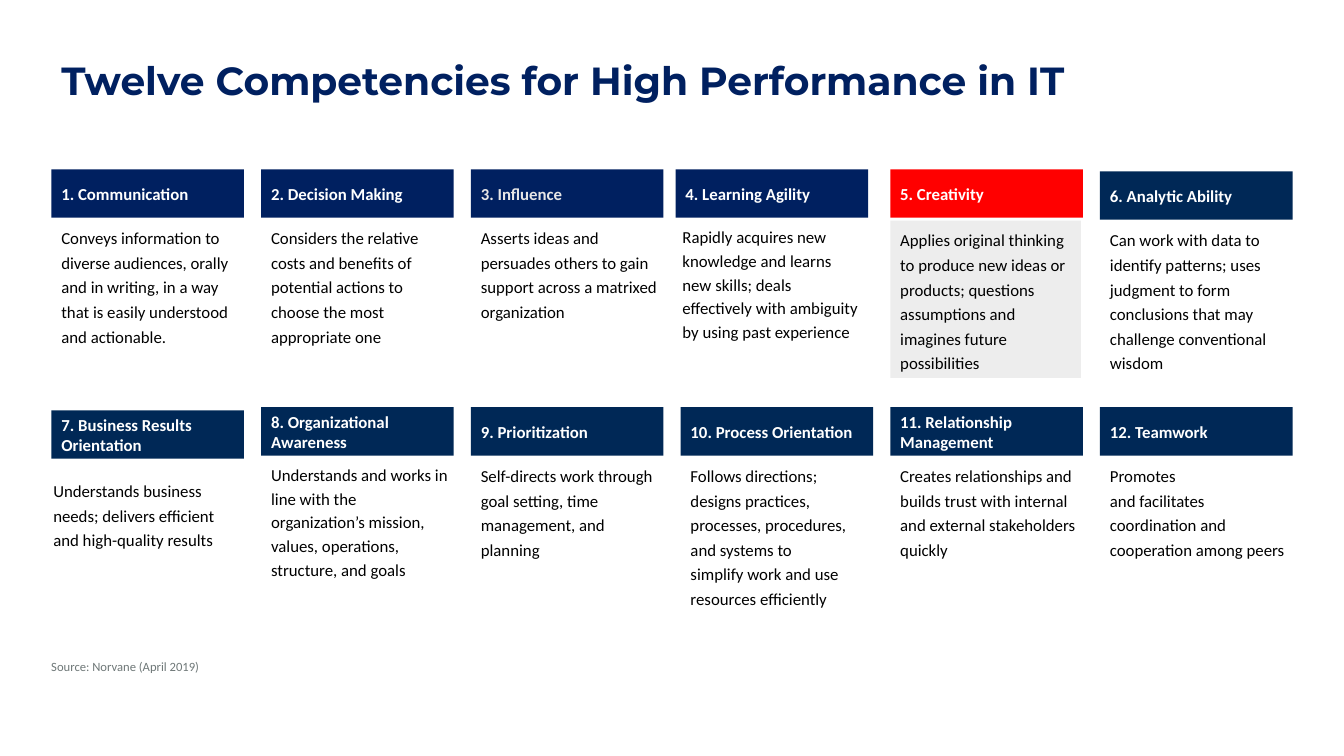
from dataclasses import dataclass

from pptx import Presentation
from pptx.dml.color import RGBColor
from pptx.enum.shapes import MSO_SHAPE as Shape
from pptx.enum.text import MSO_ANCHOR as Anchor, MSO_AUTO_SIZE as AutoSize, PP_ALIGN as Align
from pptx.util import Inches, Pt

NAVY, DARK_BLUE, RED = "002060", "002856", "FF0000"
WHITE, PALE_GRAY, LIGHT_GRAY = "FFFFFF", "E7E6E6", "EDEDED"
BLACK, SOURCE_GRAY = "000000", "6F7878"

# Grid of competencies, in inches
COLUMNS = 6
LEFT, COLUMN_STEP = 0.51, 2.08
ROW_TOPS = (1.68, 4.04)
CARD_WIDTH, HEADER_HEIGHT, BODY_HEIGHT = 1.91, 0.48, 1.56
BODY_DROP = 0.49


@dataclass
class Competency:
    name: str
    description: str
    fill: str = DARK_BLUE
    name_color: str = WHITE
    body_fill: str = ""
    body_width: float = CARD_WIDTH
    line_spacing: float = 1.22
    header_shift: tuple = (0, 0)
    body_shift: tuple = (0, 0)


# A line feed within a text is a line break
COMPETENCIES = [
    Competency("Communication",
               "Conveys information to diverse audiences, orally and in writing, "
               "in a way that is easily understood and actionable.", NAVY),
    Competency("Decision Making",
               "Considers the relative costs and benefits of potential actions "
               "to choose the most appropriate one", NAVY),
    Competency("Influence",
               "Asserts ideas and persuades others to gain support across "
               "a matrixed organization", NAVY, PALE_GRAY, WHITE),
    Competency("Learning Agility",
               "Rapidly acquires new knowledge and learns new skills; deals "
               "effectively with ambiguity by using past experience",
               NAVY, body_fill=WHITE, line_spacing=1.17,
               header_shift=(-0.05, 0), body_shift=(-0.08, 0)),
    Competency("Creativity",
               "Applies original thinking to produce new ideas or \nproducts; "
               "questions assumptions and imagines future possibilities",
               RED, body_fill=LIGHT_GRAY, body_width=1.89, body_shift=(0, 0.02)),
    Competency("Analytic Ability",
               "Can work with data to identify patterns; uses judgment to form "
               "conclusions that may challenge conventional wisdom",
               header_shift=(0, 0.02), body_shift=(0, 0.02)),
    Competency("Business Results Orientation",
               "Understands business needs; delivers efficient and high-quality results",
               header_shift=(0, 0.03), body_shift=(-0.08, 0.15)),
    Competency("Organizational \nAwareness",
               "Understands and works in line with the organization’s mission, "
               "values, operations, structure, and goals", line_spacing=1.17),
    Competency("Prioritization",
               "Self-directs work through goal setting, time management, and planning"),
    Competency("Process Orientation",
               "Follows directions; designs practices, processes, procedures, and "
               "systems to \nsimplify work and use resources efficiently"),
    Competency("Relationship \nManagement",
               "Creates relationships and builds trust with internal and external "
               "stakeholders quickly"),
    Competency("Teamwork",
               "Promotes \nand facilitates \ncoordination and cooperation among peers"),
]


def rgb(color):
    return RGBColor.from_string(color)


def write_text(text_frame, text, size, color, bold=False, font="Calibri", line_spacing=None):
    text_frame.word_wrap = True
    paragraph = text_frame.paragraphs[0]
    paragraph.text = text.replace("\n", "\v")
    paragraph.alignment = Align.LEFT
    if line_spacing:
        paragraph.line_spacing = line_spacing
    for run in paragraph.runs:
        run.font.name = font
        run.font.size = Pt(size)
        run.font.bold = bold
        run.font.color.rgb = rgb(color)


def add_rectangle(slide, left, top, width, height, fill):
    shape = slide.shapes.add_shape(
        Shape.RECTANGLE, Inches(left), Inches(top), Inches(width), Inches(height))
    shape.shadow.inherit = False
    shape.fill.solid()
    shape.fill.fore_color.rgb = rgb(fill)
    shape.line.fill.background()
    return shape


def add_text_box(slide, left, top, width, height):
    return slide.shapes.add_textbox(
        Inches(left), Inches(top), Inches(width), Inches(height))


def add_title(slide, text):
    title = slide.shapes.title
    title.left, title.top = Inches(0.51), Inches(0.1)
    title.width, title.height = Inches(11.5), Inches(1.45)
    write_text(title.text_frame, text, 28, NAVY, True, "Montserrat", 0.9)
    title.text_frame.vertical_anchor = Anchor.MIDDLE
    title.text_frame.auto_size = AutoSize.NONE


def add_header(slide, left, top, number, competency):
    header = add_rectangle(slide, left, top, CARD_WIDTH, HEADER_HEIGHT, competency.fill)
    text_frame = header.text_frame
    text_frame.vertical_anchor = Anchor.MIDDLE
    text_frame.margin_right = Inches(0)
    write_text(text_frame, f"{number}. {competency.name}", 12, competency.name_color, True)


def add_body(slide, left, top, competency):
    area = (left, top, competency.body_width, BODY_HEIGHT)
    if competency.body_fill:
        body = add_rectangle(slide, *area, competency.body_fill)
    else:
        body = add_text_box(slide, *area)
    text_frame = body.text_frame
    text_frame.vertical_anchor = Anchor.TOP
    text_frame.margin_right = Inches(0.04)
    text_frame.auto_size = AutoSize.SHAPE_TO_FIT_TEXT
    write_text(text_frame, competency.description, 12, BLACK,
               line_spacing=competency.line_spacing)


def add_competency(slide, index, competency):
    row, column = divmod(index, COLUMNS)
    left, top = LEFT + column * COLUMN_STEP, ROW_TOPS[row]
    header_x, header_y = competency.header_shift
    body_x, body_y = competency.body_shift
    add_header(slide, left + header_x, top + header_y, index + 1, competency)
    add_body(slide, left + body_x, top + BODY_DROP + body_y, competency)


def main():
    presentation = Presentation()
    presentation.slide_width, presentation.slide_height = Inches(13.33), Inches(7.5)
    slide = presentation.slides.add_slide(presentation.slide_layouts.get_by_name("Title Only"))

    add_title(slide, "Twelve Competencies for High Performance in IT")

    # Competency cards
    for index, competency in enumerate(COMPETENCIES):
        add_competency(slide, index, competency)

    # Source line
    source = add_text_box(slide, 0.41, 6.49, 10.15, 0.25)
    write_text(source.text_frame, "Source: Norvane (April 2019)", 9, SOURCE_GRAY)

    presentation.save("out.pptx")


if __name__ == "__main__":
    main()
